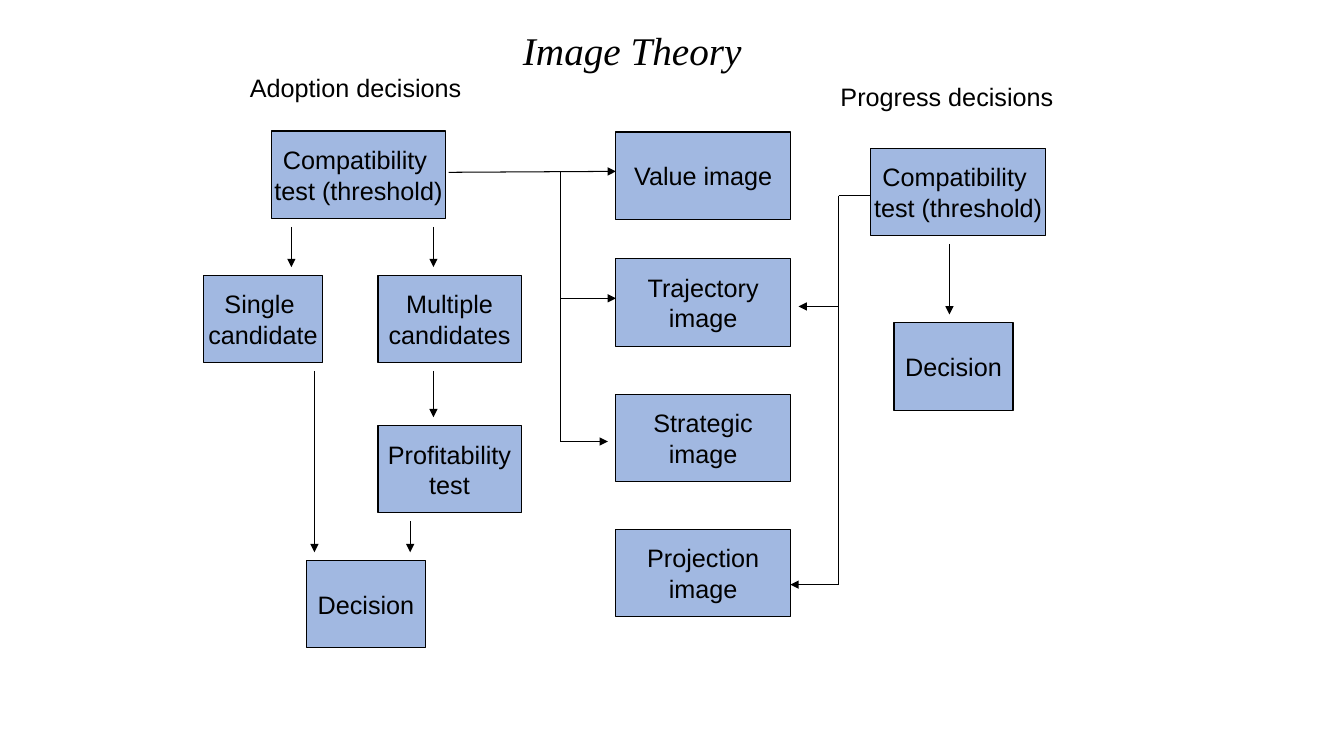
import pptx
import pptx.dml.color
import pptx.enum.shapes
import pptx.enum.text
import pptx.oxml
import pptx.oxml.ns
import pptx.util

Pt = pptx.util.Pt
BLACK, BLUE = "000000", "4472C4"
BOX_HEIGHT, WIDE, MEDIUM, NARROW = 62.6, 124.6, 102.2, 85
GAP = 5.8  # space between a box and a free arrow end


def color(hex_string):
    return pptx.dml.color.RGBColor.from_string(hex_string)


def add_xml(parent, tag, **attributes):
    element = pptx.oxml.parse_xml(f"<{tag} {pptx.oxml.ns.nsdecls('a')}/>")
    for name, value in attributes.items():
        element.set(name, value)
    parent.append(element)


def set_font(paragraph, name, size, italic=None):
    font = paragraph.font
    font.name, font.size, font.italic = name, Pt(size), italic
    font.color.rgb = color(BLACK)


def add_label(slide, left, top, width, height, text, name="Arial", size=18, italic=None):
    label = slide.shapes.add_textbox(Pt(left), Pt(top), Pt(width), Pt(height))
    frame = label.text_frame
    frame.word_wrap = False
    frame.auto_size = pptx.enum.text.MSO_AUTO_SIZE.SHAPE_TO_FIT_TEXT
    frame.text = text
    set_font(frame.paragraphs[0], name, size, italic)


def add_box(slide, left, top, width, text):
    """Add a half-transparent blue box with one paragraph per line of text."""
    box = slide.shapes.add_shape(pptx.enum.shapes.MSO_SHAPE.RECTANGLE,
                                 Pt(left), Pt(top), Pt(width), Pt(BOX_HEIGHT))
    box.shadow.inherit = False
    box.fill.solid()
    box.fill.fore_color.rgb = color(BLUE)
    add_xml(box.fill._xPr.solidFill[0], "a:alpha", val="50000")
    box.line.color.rgb = color(BLACK)
    box.line.width = Pt(0.75)
    frame = box.text_frame
    frame.word_wrap = False
    frame.vertical_anchor = pptx.enum.text.MSO_ANCHOR.MIDDLE
    frame.text = text
    for paragraph in frame.paragraphs:
        paragraph.alignment = pptx.enum.text.PP_ALIGN.CENTER
        set_font(paragraph, "Arial", 18)
    return box


def add_line(slide, start, end, arrow=True):
    line = slide.shapes.add_connector(pptx.enum.shapes.MSO_CONNECTOR.STRAIGHT,
                                      *(Pt(value) for value in (*start, *end)))
    line.line.color.rgb = color(BLACK)
    line.line.width = Pt(0.75)
    if arrow:
        add_xml(line.line._get_or_add_ln(), "a:tailEnd", type="triangle")
    add_xml(line._element.spPr, "a:effectLst")


def add_down_arrow(slide, x, upper, lower):
    """Add an arrow at x in the space between two boxes."""
    add_line(slide, (x, upper.top.pt + BOX_HEIGHT + GAP), (x, lower.top.pt - GAP))


def add_images(slide, left, top):
    """Add the column of four images and return their boxes."""
    rows = [(0, "Value image"), (90.7, "Trajectory\nimage"),
            (187.2, "Strategic\nimage"), (283.7, "Projection\nimage")]
    return [add_box(slide, left, top + offset, WIDE, text) for offset, text in rows]


def add_adoption(slide, left, top):
    """Add the adoption flow and return its compatibility test."""
    add_label(slide, left + 26, top, 167, 28.8, "Adoption decisions")
    test = add_box(slide, left + 48.4, top + 45.4, WIDE, "Compatibility \ntest (threshold)")
    single = add_box(slide, left, top + 148.4, NARROW, "Single \ncandidate")
    multiple = add_box(slide, left + WIDE, top + 148.4, MEDIUM, "Multiple\ncandidates")
    profit = add_box(slide, left + WIDE, top + 255.6, MEDIUM, "Profitability\ntest")
    decision = add_box(slide, left + 73.5, top + 352.1, NARROW, "Decision")
    for x, upper, lower in [(62.7, test, single), (164.2, test, multiple),
                            (164.2, multiple, profit), (147.6, profit, decision),
                            (79.2, single, decision)]:
        add_down_arrow(slide, left + x, upper, lower)
    return test


def add_progress(slide, left, top):
    """Add the progress flow and return its compatibility test."""
    add_label(slide, left, top, 167.8, 28.8, "Progress decisions")
    test = add_box(slide, left + 28.8, top + 51.1, WIDE, "Compatibility \ntest (threshold)")
    decision = add_box(slide, left + 45.3, top + 175.7, NARROW, "Decision")
    add_down_arrow(slide, left + 84.9, test, decision)
    return test


def add_adoption_links(slide, test, images, trunk):
    """Link the adoption test to the first three images by a trunk line."""
    value, trajectory, strategic = images[:3]
    edge = value.left.pt
    first, second = value.top.pt + 28.1, trajectory.top.pt + 28.1
    third = strategic.top.pt + 33.9
    add_line(slide, (trunk, first), (trunk, third), arrow=False)
    add_line(slide, (trunk, third), (edge - GAP, third))
    add_line(slide, (trunk, second), (edge, second))
    add_line(slide, (test.left.pt + WIDE + 2, first + 0.7), (edge, first))


def add_progress_links(slide, test, images, trunk):
    """Link the progress test to the trajectory and projection images."""
    edge = images[1].left.pt + WIDE
    start = test.top.pt + 33.9
    upper, lower = images[1].top.pt + 33.9, images[3].top.pt + 39.6
    add_line(slide, (trunk, start), (test.left.pt, start), arrow=False)
    add_line(slide, (trunk, start), (trunk, lower), arrow=False)
    add_line(slide, (trunk, lower), (edge, lower))
    add_line(slide, (trunk, upper), (edge + GAP, upper))


def main():
    presentation = pptx.Presentation()
    presentation.slide_width, presentation.slide_height = Pt(960), Pt(540)
    slide = presentation.slides.add_slide(presentation.slide_layouts[6])
    add_label(slide, 366.5, 15.1, 170.6, 41, "Image Theory", "Times New Roman", 28, True)
    images = add_images(slide, 440, 94.3)
    adoption_test = add_adoption(slide, 145.4, 48.2)
    progress_test = add_progress(slide, 593.3, 54.7)
    add_adoption_links(slide, adoption_test, images, 400.3)
    add_progress_links(slide, progress_test, images, 599)
    presentation.save("out.pptx")


if __name__ == "__main__":
    main()
